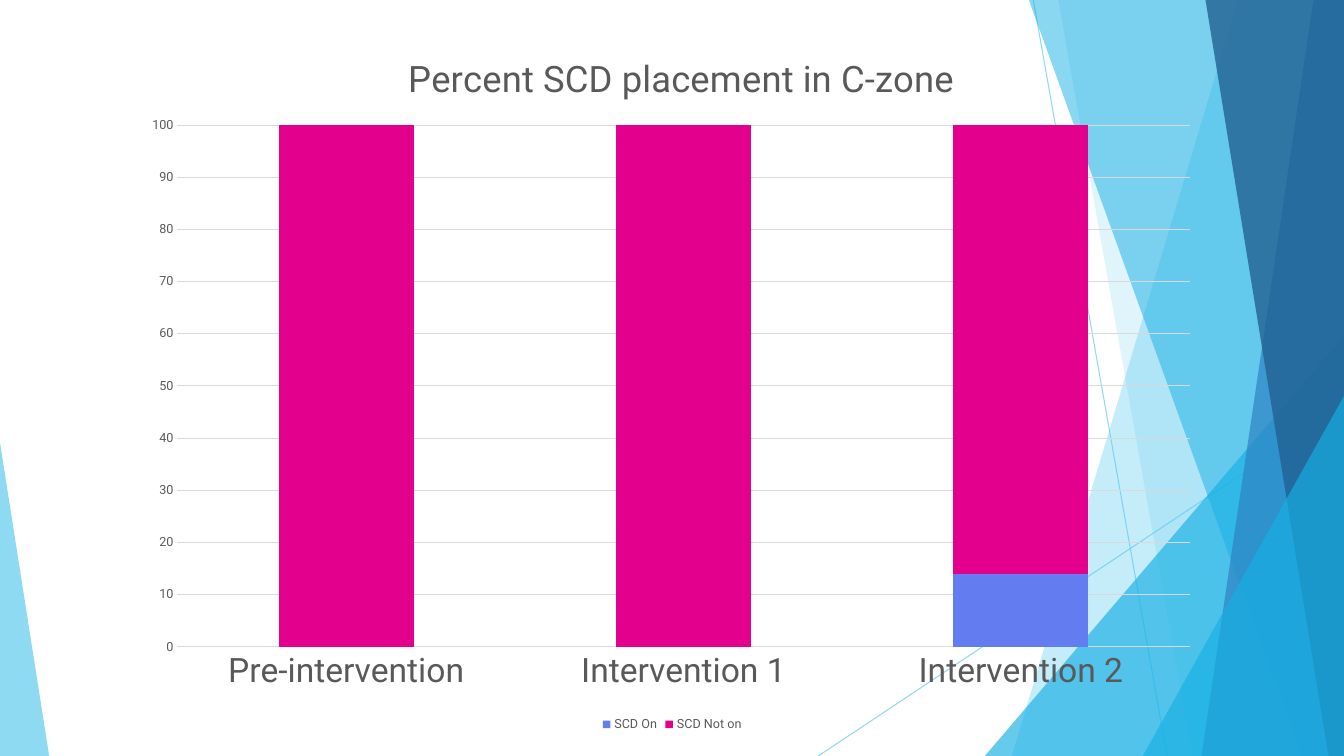
from lxml import etree
from pptx import Presentation
from pptx import util as u
from pptx.chart.data import CategoryChartData
from pptx.dml.color import RGBColor
from pptx.enum import chart as charts, shapes
from pptx.oxml import ns

FONT = "Roboto"
COLORS = {
    "sky": "5FCBEF", "cyan": "17B0E4", "blue": "2E83C3", "navy": "226292",
    "grid": "D9D9D9", "label": "595959", "on": "637CEF", "off": "E3008C",
}
WIDTH, HEIGHT = 33.87, 19.05

TITLE = "Percent SCD placement in C-zone"
CATEGORIES = ["Pre-intervention", "Intervention 1", "Intervention 2"]
SERIES = [("SCD On", (0, 0, 14), "on"), ("SCD Not on", (100, 100, 86), "off")]
CHART_BOX = (3.3, 0.48, 27.28, 18.06)
TITLE_LAYOUT = {"x": 0.25, "y": 0.04}
PLOT_LAYOUT = {"x": 0.043, "y": 0.148, "w": 0.935, "h": 0.728}

RAYS = [((26.04, 0), (29.41, HEIGHT)), ((WIDTH, 10.24), (20.62, HEIGHT))]
FACETS = [
    ("band", (31.2, 25.5), "sky", 36),
    ("band", (26.67, 30.05), "sky", 20),
    ("triangle", (24.82, WIDTH, 8.46, 1), "cyan", 66),
    ("band", (25.93, 32.8), "cyan", 50),
    ("band", (33.1, 30.28), "blue", 70),
    ("band", (30.38, 33.48), "navy", 80),
    ("triangle", (28.8, WIDTH, 9.98, 1), "cyan", 66),
    ("triangle", (0, 1.24, 11.15, 0), "sky", 70),
]


def rgb(name):
    return RGBColor.from_string(COLORS[name])


def set_alpha(shape, percent):
    for color in shape._element.spPr.iter(ns.qn("a:srgbClr")):
        etree.SubElement(color, ns.qn("a:alpha")).set("val", str(percent * 1000))


def add_ray(slide, start, end):
    ray = slide.shapes.add_connector(
        shapes.MSO_CONNECTOR.STRAIGHT, *(u.Cm(value) for value in start + end))
    ray.line.color.rgb = rgb("sky")
    ray.line.width = u.Pt(0.75)
    set_alpha(ray, 70)
    etree.SubElement(ray._element.spPr, ns.qn("a:effectLst"))


def add_band(slide, top_x, bottom_x):
    builder = slide.shapes.build_freeform(u.Cm(top_x), 0)
    corners = [(WIDTH, 0), (WIDTH, HEIGHT), (bottom_x, HEIGHT)]
    builder.add_line_segments([(u.Cm(x), u.Cm(y)) for x, y in corners], close=True)
    return builder.convert_to_shape()


def add_triangle(slide, left, right, top, apex):
    box = (left, top, right - left, HEIGHT - top)
    triangle = slide.shapes.add_shape(
        shapes.MSO_SHAPE.ISOSCELES_TRIANGLE, *(u.Cm(value) for value in box))
    triangle.adjustments[0] = apex
    return triangle


def add_facet(slide, kind, geometry, color, opacity):
    draw = add_band if kind == "band" else add_triangle
    shape = draw(slide, *geometry)
    shape.shadow.inherit = False
    shape.fill.solid()
    shape.fill.fore_color.rgb = rgb(color)
    shape.line.fill.background()
    set_alpha(shape, opacity)


def style_font(font, size):
    font.name = FONT
    font.size = u.Pt(size)
    font.bold = False
    font.color.rgb = rgb("label")


def style_line(line):
    line.color.rgb = rgb("grid")
    line.width = u.Pt(0.75)


def place(parent, position, values, inner=False):
    layout = parent.find(ns.qn("c:layout"))
    if layout is not None:
        parent.remove(layout)
    layout = etree.Element(ns.qn("c:layout"))
    parent.insert(position, layout)
    manual = etree.SubElement(layout, ns.qn("c:manualLayout"))
    settings = [("layoutTarget", "inner")] if inner else []
    settings += [("xMode", "edge"), ("yMode", "edge"), *values.items()]
    for tag, value in settings:
        etree.SubElement(manual, ns.qn("c:" + tag)).set("val", str(value))


def add_placement_chart(slide):
    data = CategoryChartData()
    data.categories = CATEGORIES
    for name, values, _ in SERIES:
        data.add_series(name, values)
    chart = slide.shapes.add_chart(
        charts.XL_CHART_TYPE.COLUMN_STACKED, *(u.Cm(value) for value in CHART_BOX), data).chart
    style_font(chart.font, 10)

    chart.has_title = True
    run = chart.chart_title.text_frame.paragraphs[0].add_run()
    run.text = TITLE
    style_font(run.font, 26)
    place(chart.chart_title._element, 1, TITLE_LAYOUT)

    plot = chart.plots[0]
    plot.gap_width = 150
    plot.overlap = 100
    plot.vary_by_categories = False
    for series, (_, _, color) in zip(plot.series, SERIES):
        series.format.fill.solid()
        series.format.fill.fore_color.rgb = rgb(color)
    place(chart._chartSpace.find(".//" + ns.qn("c:plotArea")), 0, PLOT_LAYOUT, inner=True)

    for axis, size in ((chart.category_axis, 24), (chart.value_axis, 9)):
        axis.major_tick_mark = charts.XL_TICK_MARK.NONE
        axis.minor_tick_mark = charts.XL_TICK_MARK.NONE
        style_font(axis.tick_labels.font, size)
    style_line(chart.category_axis.format.line)
    value_axis = chart.value_axis
    value_axis.minimum_scale = 0
    value_axis.maximum_scale = 100
    value_axis.major_unit = 10
    value_axis.format.line.fill.background()
    value_axis.has_major_gridlines = True
    style_line(value_axis.major_gridlines.format.line)

    chart.has_legend = True
    chart.legend.position = charts.XL_LEGEND_POSITION.BOTTOM
    chart.legend.include_in_layout = False
    style_font(chart.legend.font, 9)


def main():
    presentation = Presentation()
    presentation.slide_width = u.Cm(WIDTH)
    presentation.slide_height = u.Cm(HEIGHT)
    slide = presentation.slides.add_slide(presentation.slide_layouts[6])
    for start, end in RAYS:
        add_ray(slide, start, end)
    for facet in FACETS:
        add_facet(slide, *facet)
    add_placement_chart(slide)
    presentation.save("out.pptx")


if __name__ == "__main__":
    main()
